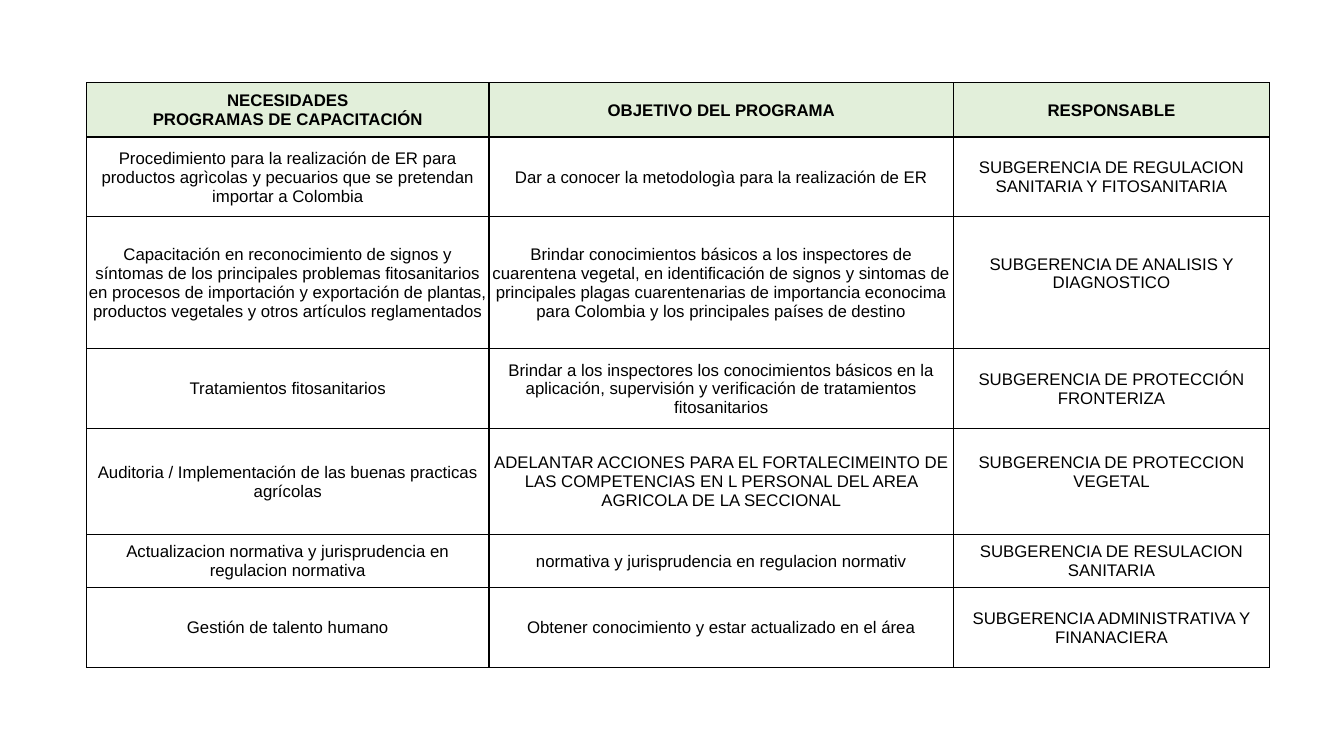
from dataclasses import dataclass

from lxml.etree import SubElement
from pptx import Presentation
from pptx.dml.color import RGBColor
from pptx.enum.text import MSO_ANCHOR, PP_ALIGN
from pptx.oxml.ns import qn
from pptx.table import Table, _Cell
from pptx.util import Inches, Pt


@dataclass(frozen=True)
class Theme:
    font: str = "Arial"
    size: int = 12
    ink: str = "000000"
    head: str = "E2EFDA"
    line: int = 1


@dataclass(frozen=True)
class Row:
    height: float
    need: str
    goal: str
    owner: str
    lift: float = 0  # extra space below the owner


THEME = Theme()
LEFT, TOP = 0.86, 0.82
WIDTHS = (3.99, 4.61, 3.13)
PAD = 0.01
ROWS = (
    Row(0.54, "NECESIDADES\vPROGRAMAS DE CAPACITACIÓN",
        "OBJETIVO DEL PROGRAMA", "RESPONSABLE"),
    Row(0.79,
        "Procedimiento para la realización de ER para productos agrìcolas "
        "y pecuarios que se pretendan importar a Colombia",
        "Dar a conocer la metodologìa para la realización de ER",
        "SUBGERENCIA DE REGULACION SANITARIA Y FITOSANITARIA"),
    Row(1.31,
        "Capacitación en reconocimiento de signos y síntomas de los "
        "principales problemas fitosanitarios en procesos de importación y "
        "exportación de plantas, productos vegetales y otros artículos "
        "reglamentados",
        "Brindar conocimientos básicos a los inspectores de cuarentena "
        "vegetal, en identificación de signos y sintomas de principales "
        "plagas cuarentenarias de importancia econocima para Colombia y los "
        "principales países de destino",
        "SUBGERENCIA DE ANALISIS Y DIAGNOSTICO", 0.19),
    Row(0.79, "Tratamientos fitosanitarios",
        "Brindar a los inspectores los conocimientos básicos en la "
        "aplicación, supervisión y verificación de tratamientos "
        "fitosanitarios",
        "SUBGERENCIA DE PROTECCIÓN FRONTERIZA"),
    Row(1.05,
        "Auditoria / Implementación de las buenas practicas agrícolas",
        "ADELANTAR ACCIONES PARA EL FORTALECIMEINTO DE LAS COMPETENCIAS EN "
        "L PERSONAL DEL AREA AGRICOLA DE LA SECCIONAL",
        "SUBGERENCIA DE PROTECCION VEGETAL", 0.19),
    Row(0.53,
        "Actualizacion normativa y jurisprudencia en regulacion normativa",
        "normativa y jurisprudencia en regulacion normativ",
        "SUBGERENCIA DE RESULACION SANITARIA"),
    Row(0.79, "Gestión de talento humano",
        "Obtener conocimiento y estar actualizado en el área",
        "SUBGERENCIA ADMINISTRATIVA Y FINANACIERA"),
)


def add_edges(cell: _Cell) -> None:
    props = cell._tc.get_or_add_tcPr()
    for tag in ("a:lnL", "a:lnR", "a:lnT", "a:lnB"):
        line = SubElement(props, qn(tag), w=str(Pt(THEME.line)))
        fill = SubElement(line, qn("a:solidFill"))
        SubElement(fill, qn("a:srgbClr"), val=THEME.ink)


def fill_cell(cell: _Cell, text: str, head: bool, lift: float) -> None:
    add_edges(cell)
    if head:
        cell.fill.solid()
        cell.fill.fore_color.rgb = RGBColor.from_string(THEME.head)
    else:
        cell.fill.background()
    cell.margin_left = cell.margin_right = cell.margin_top = Inches(PAD)
    cell.margin_bottom = Inches(lift)
    cell.vertical_anchor = MSO_ANCHOR.MIDDLE
    cell.text_frame.text = text
    para = cell.text_frame.paragraphs[0]
    para.alignment = PP_ALIGN.CENTER
    font = para.font
    font.name, font.size, font.bold = THEME.font, Pt(THEME.size), head
    font.color.rgb = RGBColor.from_string(THEME.ink)


def fill_table(table: Table) -> None:
    table.first_row = table.horz_banding = False
    for column, width in zip(table.columns, WIDTHS):
        column.width = Inches(width)
    for i, row in enumerate(ROWS):
        table.rows[i].height = Inches(row.height)
        lifts = (0, 0, row.lift)
        for j, text in enumerate((row.need, row.goal, row.owner)):
            fill_cell(table.cell(i, j), text, i == 0, lifts[j])


def main() -> None:
    deck = Presentation()
    deck.slide_width, deck.slide_height = Inches(13.33), Inches(7.5)
    slide = deck.slides.add_slide(deck.slide_layouts[6])
    frame = slide.shapes.add_table(
        len(ROWS), len(WIDTHS), Inches(LEFT), Inches(TOP),
        Inches(sum(WIDTHS)), Inches(sum(row.height for row in ROWS)))
    fill_table(frame.table)
    deck.save("out.pptx")


if __name__ == "__main__":
    main()
